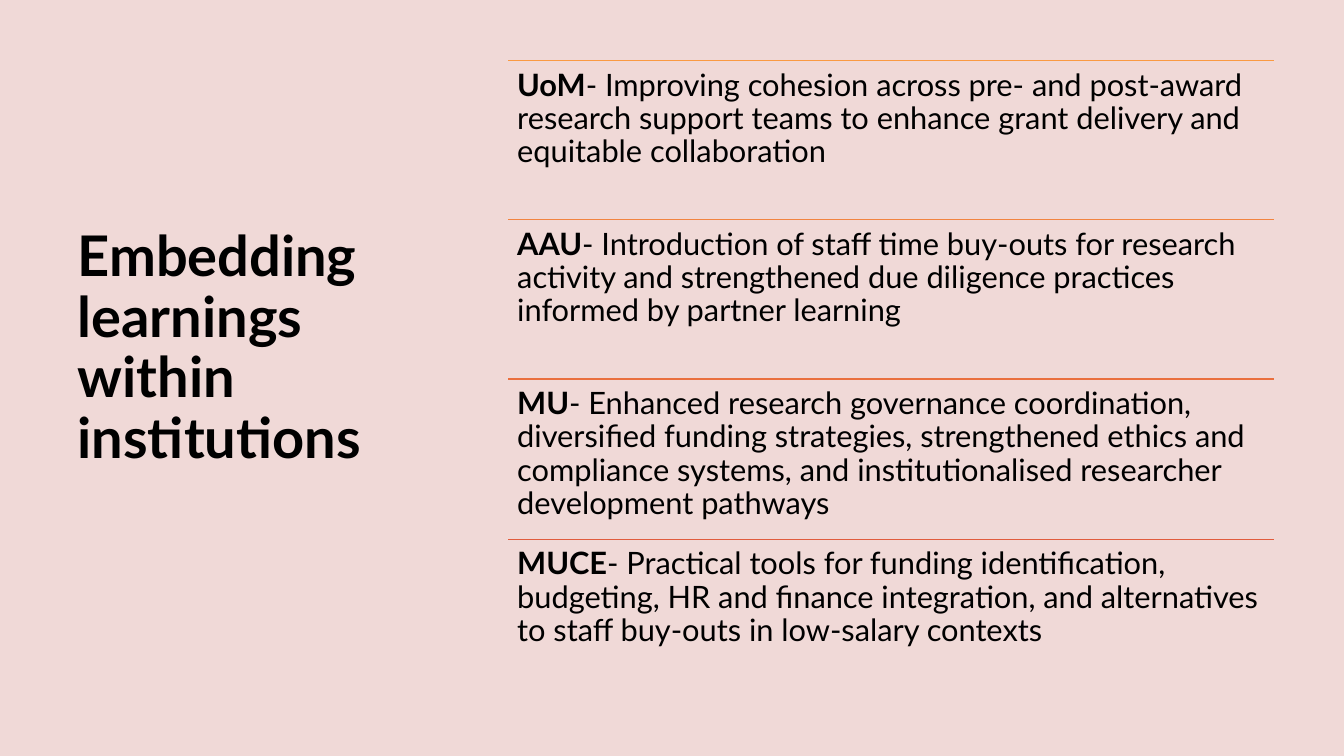
import dataclasses

import pptx
import pptx.dml.color
import pptx.enum.shapes
import pptx.enum.text
import pptx.oxml.ns
import pptx.util
from lxml import etree

EMU_PER_PX = 9144  # 100 px to the inch


@dataclasses.dataclass(frozen=True)
class Theme:
    font: str = "Lato"
    background: str = "F0D9D7"
    text: str = "000000"
    rules: tuple = ("FA9A42", "F28440", "EA6F3E", "E15C3D")
    title_size: int = 40
    body_size: int = 22
    rule_width: int = 1
    line_spacing: float = 0.9


THEME = Theme()

HEADING = "Embedding learnings within institutions"
LEARNINGS = (
    ("UoM", "- Improving cohesion across pre- and post-award research support teams "
            "to enhance grant delivery and equitable collaboration"),
    ("AAU", "- Introduction of staff time buy-outs for research activity and strengthened "
            "due diligence practices informed by partner learning"),
    ("MU", "- Enhanced research governance coordination, diversified funding strategies, "
           "strengthened ethics and compliance systems, and institutionalised researcher "
           "development pathways"),
    ("MUCE", "- Practical tools for funding identification, budgeting, HR and finance "
             "integration, and alternatives to staff buy-outs in low-salary contexts"),
)

CONTENT_TOP, CONTENT_HEIGHT = 60, 633
LIST_LEFT, LIST_WIDTH = 504, 760


def px(*lengths):
    return [pptx.util.Emu(length * EMU_PER_PX) for length in lengths]


def rgb(value):
    return pptx.dml.color.RGBColor.from_string(value)


def add_run(paragraph, text, size, bold):
    run = paragraph.add_run()
    run.text = text
    run.font.name = THEME.font
    run.font.size = pptx.util.Pt(size)
    run.font.bold = bold
    run.font.color.rgb = rgb(THEME.text)


def fill_title(slide):
    title = slide.shapes.title
    title.left, title.top, title.width, title.height = px(67, CONTENT_TOP, 382, CONTENT_HEIGHT)
    frame = title.text_frame
    frame.word_wrap = True
    frame.auto_size = pptx.enum.text.MSO_AUTO_SIZE.NONE
    frame.vertical_anchor = pptx.enum.text.MSO_ANCHOR.MIDDLE
    frame.margin_left, frame.margin_top, frame.margin_right, frame.margin_bottom = px(10, 5, 10, 65)
    paragraph = frame.paragraphs[0]
    paragraph.alignment = pptx.enum.text.PP_ALIGN.LEFT
    paragraph.line_spacing = THEME.line_spacing
    add_run(paragraph, HEADING, THEME.title_size, True)


def add_rule(slide, top, color):
    rule = slide.shapes.add_connector(
        pptx.enum.shapes.MSO_CONNECTOR.STRAIGHT,
        *px(LIST_LEFT, top, LIST_LEFT + LIST_WIDTH, top))
    rule.line.color.rgb = rgb(color)
    rule.line.width = pptx.util.Pt(THEME.rule_width)
    etree.SubElement(rule._element.spPr, pptx.oxml.ns.qn("a:effectLst"))


def add_learning(slide, top, height, institution, learning):
    frame = slide.shapes.add_textbox(*px(LIST_LEFT, top, LIST_WIDTH, height)).text_frame
    frame.word_wrap = True
    frame.vertical_anchor = pptx.enum.text.MSO_ANCHOR.TOP
    frame.margin_left, frame.margin_top, frame.margin_right, frame.margin_bottom = px(9, 9, 9, 9)
    paragraph = frame.paragraphs[0]
    paragraph.line_spacing = THEME.line_spacing
    add_run(paragraph, institution, THEME.body_size, True)
    add_run(paragraph, learning, THEME.body_size, False)


def main():
    deck = pptx.Presentation()
    deck.slide_width, deck.slide_height = px(1333, 750)
    slide = deck.slides.add_slide(deck.slide_layouts.get_by_name("Title Only"))
    slide.background.fill.solid()
    slide.background.fill.fore_color.rgb = rgb(THEME.background)

    fill_title(slide)
    row_pitch = CONTENT_HEIGHT / len(LEARNINGS)
    for row, ((institution, learning), color) in enumerate(zip(LEARNINGS, THEME.rules)):
        top = round(CONTENT_TOP + row * row_pitch)
        add_rule(slide, top, color)
        add_learning(slide, top, round(row_pitch), institution, learning)

    deck.save("out.pptx")


if __name__ == "__main__":
    main()
